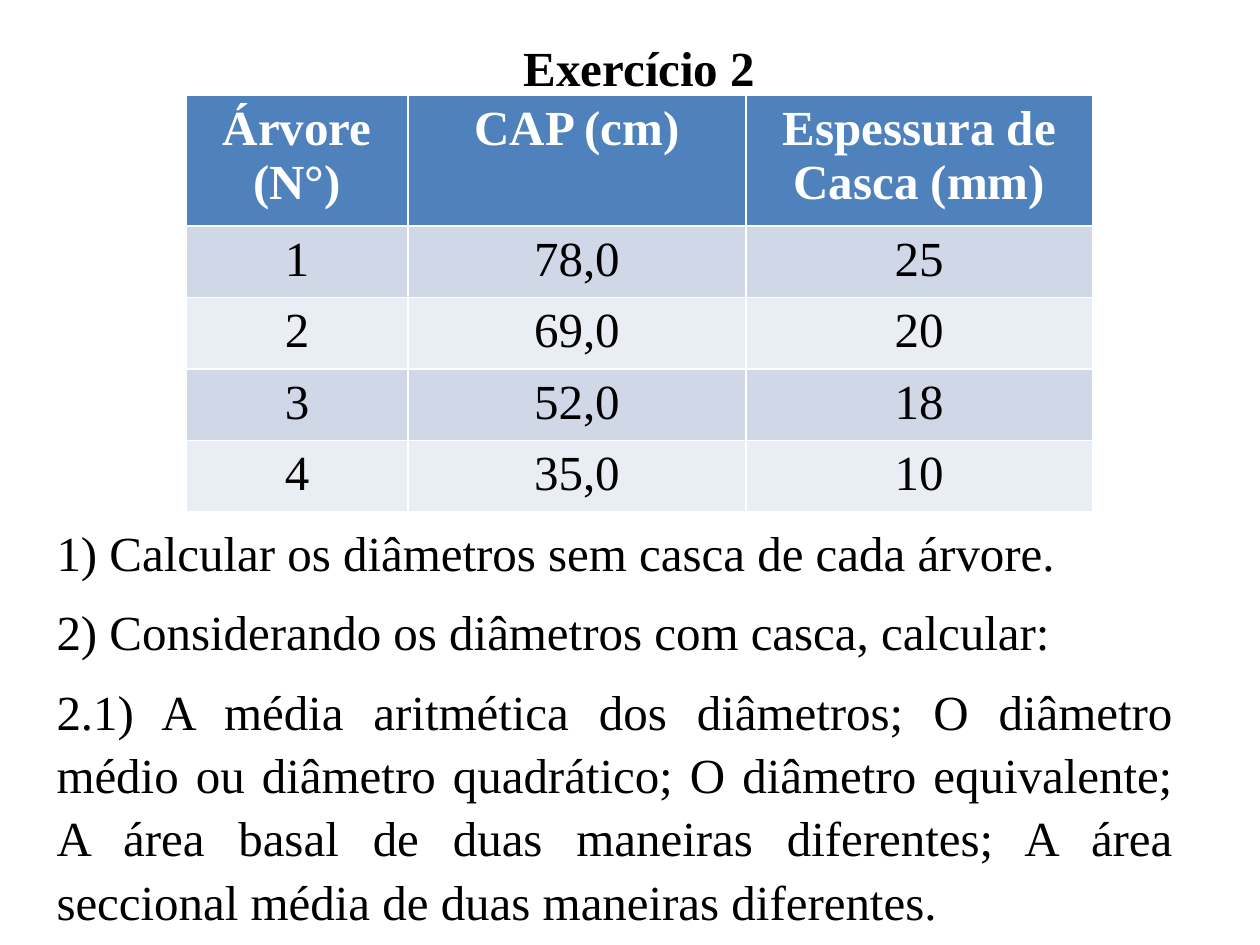
from pptx import Presentation
from pptx import util as u
from pptx.dml import color
from pptx.enum import text

COLORS = {
    "black": "000000",
    "white": "FFFFFF",
    "header": "4F81BD",
    "odd_row": "D0D8E8",
    "even_row": "E9EDF4",
}
FONT = {"name": "Times New Roman", "size": u.Pt(28)}

TITLE = "Exercício 2"
TREES = [
    ("Árvore (N°)", "CAP (cm)", "Espessura de Casca (mm)"),
    ("1", "78,0", "25"),
    ("2", "69,0", "20"),
    ("3", "52,0", "18"),
    ("4", "35,0", "10"),
]
QUESTIONS = [
    ("1) Calcular os diâmetros sem casca de cada árvore.", text.PP_ALIGN.LEFT),
    ("2) Considerando os diâmetros com casca, calcular:", text.PP_ALIGN.LEFT),
    ("2.1) A média aritmética dos diâmetros; O diâmetro médio ou diâmetro "
     "quadrático; O diâmetro equivalente; A área basal de duas maneiras "
     "diferentes; A área seccional média de duas maneiras diferentes.",
     text.PP_ALIGN.JUSTIFY),
]

TITLE_BOX = (10.31, 0.53, 5.21, 1.45)
TABLE_LEFT, TABLE_TOP = 3.76, 1.93
COLUMN_WIDTHS = [4.46, 6.82, 6.98]
ROW_HEIGHTS = [2.6] + [1.44] * 4
QUESTION_LEFT, QUESTION_TOP, QUESTION_WIDTH = 0.89, 10.31, 23.01
QUESTION_STEP = 1.6
QUESTION_HEIGHTS = [1.45, 1.45, 5.05]


def write(frame, words, alignment, color_name="black", bold=False):
    paragraph = frame.paragraphs[0]
    paragraph.alignment = alignment
    run = paragraph.add_run()
    run.text = words
    for name, value in {**FONT, "bold": bold}.items():
        setattr(run.font, name, value)
    run.font.color.rgb = color.RGBColor.from_string(COLORS[color_name])
    return paragraph


def add_text(slide, box, words, alignment, bold=False, wrap=True):
    frame = slide.shapes.add_textbox(*map(u.Cm, box)).text_frame
    frame.word_wrap = wrap
    write(frame, words, alignment, bold=bold).line_spacing = 1.08


def add_tree_table(slide):
    size = sum(COLUMN_WIDTHS), sum(ROW_HEIGHTS)
    box = map(u.Cm, (TABLE_LEFT, TABLE_TOP, *size))
    table = slide.shapes.add_table(len(TREES), len(COLUMN_WIDTHS), *box).table
    for column, width in zip(table.columns, COLUMN_WIDTHS):
        column.width = u.Cm(width)
    for index, (row, height, values) in enumerate(zip(table.rows, ROW_HEIGHTS, TREES)):
        row.height = u.Cm(height)
        header = index == 0
        fill = "header" if header else "odd_row" if index % 2 else "even_row"
        for cell, value in zip(row.cells, values):
            cell.fill.solid()
            cell.fill.fore_color.rgb = color.RGBColor.from_string(COLORS[fill])
            write(cell.text_frame, value, text.PP_ALIGN.CENTER,
                  "white" if header else "black", header)


def main():
    presentation = Presentation()
    presentation.slide_width, presentation.slide_height = u.Cm(25.4), u.Cm(19.05)
    slide = presentation.slides.add_slide(presentation.slide_layouts[6])
    add_text(slide, TITLE_BOX, TITLE, text.PP_ALIGN.LEFT, bold=True, wrap=False)
    add_tree_table(slide)
    for index, ((words, alignment), height) in enumerate(zip(QUESTIONS, QUESTION_HEIGHTS)):
        top = QUESTION_TOP + index * QUESTION_STEP
        add_text(slide, (QUESTION_LEFT, top, QUESTION_WIDTH, height), words, alignment)
    presentation.save("out.pptx")


if __name__ == "__main__":
    main()
